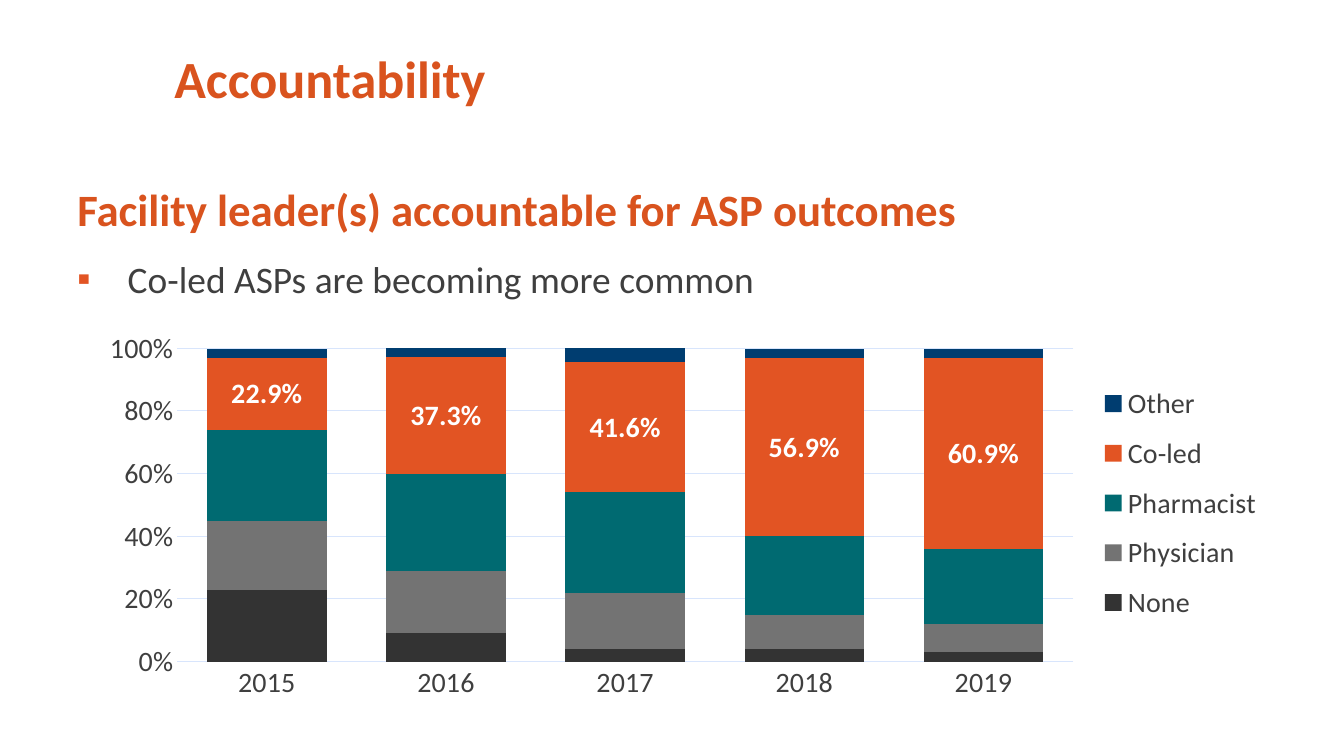
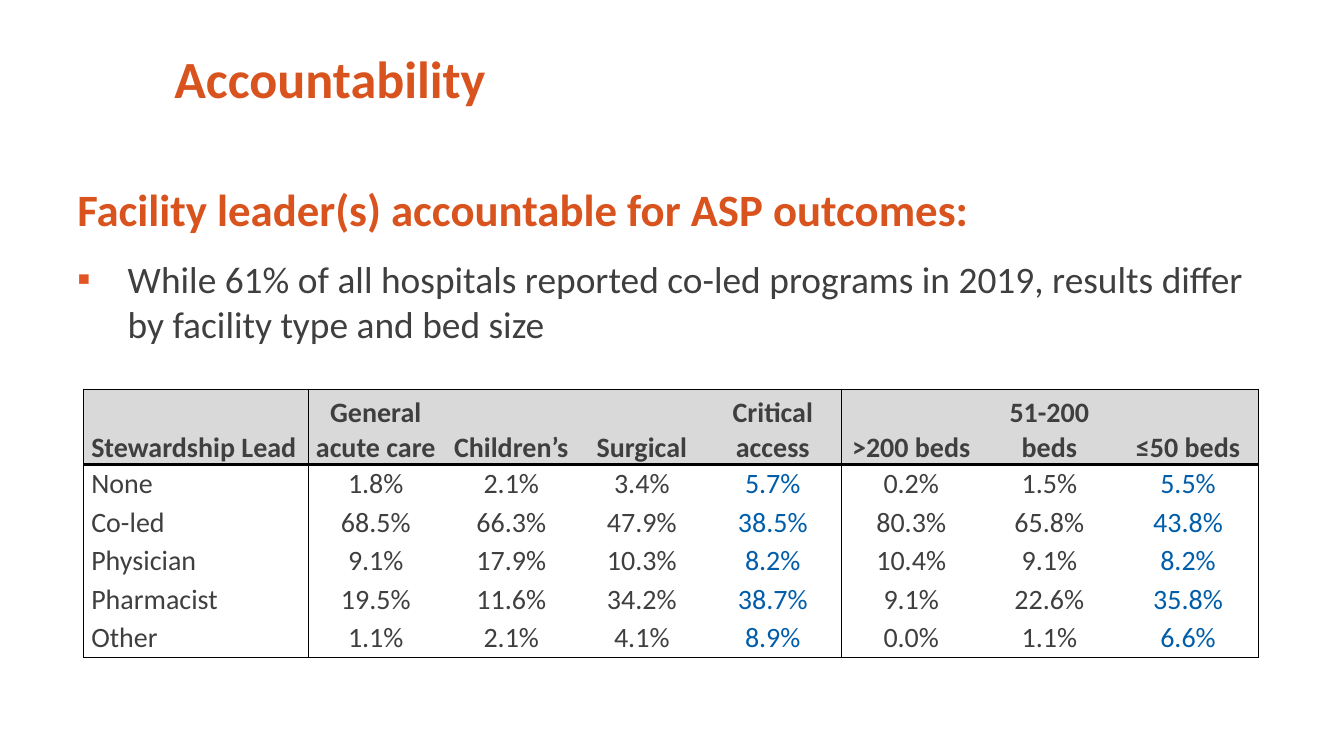
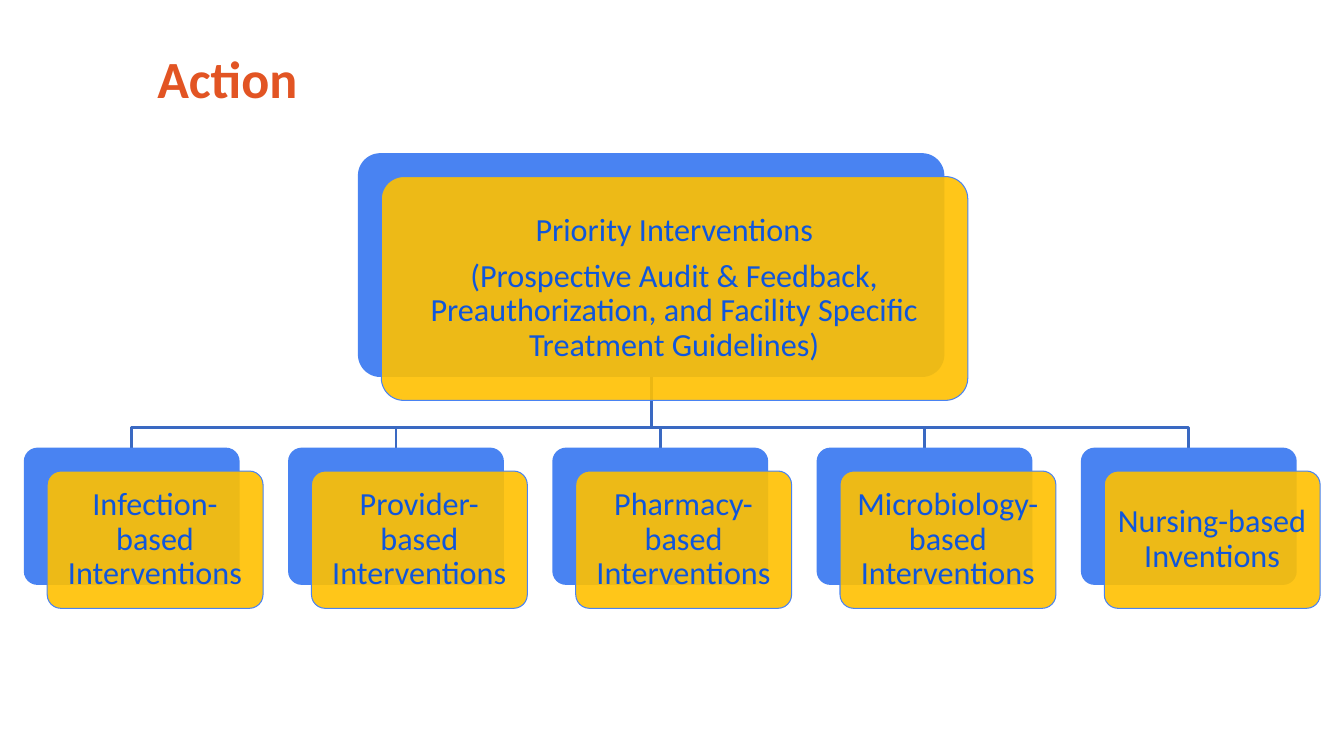
"""Build three slides on accountability and action in stewardship programs."""
from lxml.etree import SubElement
from pptx import Presentation
from pptx.chart.data import CategoryChartData
from pptx.dml.color import RGBColor
from pptx.enum.chart import XL_CHART_TYPE, XL_LEGEND_POSITION, XL_TICK_MARK
from pptx.enum.shapes import MSO_SHAPE
from pptx.enum.text import MSO_ANCHOR, MSO_AUTO_SIZE, PP_ALIGN
from pptx.oxml import parse_xml
from pptx.oxml.ns import nsdecls, qn
from pptx.util import Cm, Pt

FONT = "Calibri"
ORANGE, BRIGHT_ORANGE, GRAY = "D9531E", "E25423", "3F3F3F"
BLUE, PALE_BLUE, TREE_BLUE = "005DAA", "D8E5FC", "4983F2"
TITLE_FONT = {"size": Pt(37.3), "bold": True}
SUBTITLE_FONT = {"size": Pt(32), "bold": True}
HEADING_LINES = {"alignment": PP_ALIGN.LEFT, "line_spacing": Pt(40)}
HEADING_FRAME = {"word_wrap": True, "auto_size": MSO_AUTO_SIZE.NONE, "vertical_anchor": MSO_ANCHOR.BOTTOM}


def color(value):
    return RGBColor.from_string(value)


def write(frame, lines, font_color, font_format, paragraph_format):
    for number, line in enumerate(lines):
        para = frame.add_paragraph() if number else frame.paragraphs[0]
        for name, value in paragraph_format.items():
            setattr(para, name, value)
        span = para.add_run()
        span.text = line
        span.font.name = FONT
        span.font.color.rgb = color(font_color)
        for name, value in font_format.items():
            setattr(span.font, name, value)


deck = Presentation()
deck.slide_width, deck.slide_height = Cm(33.87), Cm(19.05)

pages = []
for title_text, title_left, title_color in [
    ("Accountability", 4.14, ORANGE),
    ("Accountability", 4.14, ORANGE),
    ("Action", 3.71, BRIGHT_ORANGE),
]:
    page = deck.slides.add_slide(deck.slide_layouts[5])
    title = page.shapes.title
    title.left, title.top, title.width, title.height = Cm(title_left), Cm(1.02), Cm(14), Cm(1.85)
    for name, value in HEADING_FRAME.items():
        setattr(title.text_frame, name, value)
    write(title.text_frame, [title_text], title_color, TITLE_FONT, HEADING_LINES)
    pages.append(page)
chart_page, table_page, tree_page = pages

for page, subtitle_text, bullet_text in [
    (chart_page, "Facility leader(s) accountable for ASP outcomes", "Co-led ASPs are becoming more common"),
    (table_page, "Facility leader(s) accountable for ASP outcomes:",
     "While 61% of all hospitals reported co-led programs in 2019, results differ by facility type and bed size"),
]:
    subtitle = page.shapes.add_textbox(Cm(1.7), Cm(3.53), Cm(30.48), Cm(2.54))
    for name, value in HEADING_FRAME.items():
        setattr(subtitle.text_frame, name, value)
    write(subtitle.text_frame, [subtitle_text], ORANGE, SUBTITLE_FONT, HEADING_LINES)

    body = page.shapes.add_textbox(Cm(1.7), Cm(6.33), Cm(30.48), Cm(2.6))
    body.text_frame.word_wrap = True
    properties = body.text_frame.paragraphs[0]._p.get_or_add_pPr()
    properties.set("marL", str(Cm(1.27)))
    properties.set("indent", str(-Cm(1.27)))
    SubElement(SubElement(properties, qn("a:buClr")), qn("a:srgbClr"), val=BRIGHT_ORANGE)
    SubElement(properties, qn("a:buFont"), typeface=FONT)
    SubElement(properties, qn("a:buChar"), char="▪")
    write(body.text_frame, [bullet_text], GRAY, {"size": Pt(26.7)}, {})

leaders = CategoryChartData(number_format="0%")
leaders.categories = ["2015", "2016", "2017", "2018", "2019"]
leader_series = [
    ("None", "333333", (0.23, 0.09, 0.04, 0.04, 0.03)),
    ("Physician", "737373", (0.22, 0.2, 0.18, 0.11, 0.09)),
    ("Pharmacist", "006A71", (0.29, 0.31, 0.32, 0.25, 0.24)),
    ("Co-led", BRIGHT_ORANGE, (0.229, 0.373, 0.416, 0.569, 0.609)),
    ("Other", "003D70", (0.03, 0.03, 0.05, 0.03, 0.03)),
]
for name, fill_color, values in leader_series:
    leaders.add_series(name, values)
chart = chart_page.shapes.add_chart(
    XL_CHART_TYPE.COLUMN_STACKED, Cm(2.06), Cm(8.2), Cm(30.1), Cm(9.63), leaders).chart
chart.has_title = False
chart.font.name, chart.font.size = FONT, Pt(20)
chart.font.color.rgb = color(GRAY)
chart.has_legend = True
chart.legend.position = XL_LEGEND_POSITION.RIGHT
chart.legend.include_in_layout = False

plot = chart.plots[0]
plot.gap_width, plot.overlap, plot.vary_by_categories = 50, 100, False
for series, (name, fill_color, values) in zip(plot.series, leader_series):
    series.format.fill.solid()
    series.format.fill.fore_color.rgb = color(fill_color)
labels = plot.series[3].data_labels
labels.show_value = True
labels.number_format, labels.number_format_is_linked = "0.0%", False
labels.font.name, labels.font.size, labels.font.bold = FONT, Pt(20), True
labels.font.color.rgb = color("FFFFFF")

years, shares = chart.category_axis, chart.value_axis
for axis in (years, shares):
    axis.major_tick_mark = axis.minor_tick_mark = XL_TICK_MARK.NONE
shares.minimum_scale, shares.maximum_scale, shares.major_unit = 0, 1, 0.2
shares.tick_labels.number_format, shares.tick_labels.number_format_is_linked = "0%", False
shares.format.line.fill.background()
for line in (years.format.line, shares.major_gridlines.format.line):
    line.color.rgb = color(PALE_BLUE)
    line.width = Pt(0.75)

plot_area = chart._chartSpace.find(".//" + qn("c:plotArea"))
for parent, position, target, bounds in [
    (plot_area, 0, '<c:layoutTarget val="inner"/>', {"x": 0.08, "y": 0.06, "w": 0.75, "h": 0.82}),
    (chart.legend._element, 1, "", {"x": 0.85, "y": 0.12, "w": 0.14, "h": 0.69}),
]:
    for old_layout in parent.findall(qn("c:layout")):
        parent.remove(old_layout)
    modes = "".join(f'<c:{side}Mode val="edge"/>' for side in "xy")
    sizes = "".join(f'<c:{side} val="{value}"/>' for side, value in bounds.items())
    parent.insert(position, parse_xml(
        f'<c:layout {nsdecls("c")}><c:manualLayout>{target}{modes}{sizes}</c:manualLayout></c:layout>'))

rows = [
    ("Stewardship Lead", "General acute care", "Children’s", "Surgical", "Critical access",
     ">200 beds", "51-200 beds", "≤50 beds"),
    ("None", "1.8%", "2.1%", "3.4%", "5.7%", "0.2%", "1.5%", "5.5%"),
    ("Co-led", "68.5%", "66.3%", "47.9%", "38.5%", "80.3%", "65.8%", "43.8%"),
    ("Physician", "9.1%", "17.9%", "10.3%", "8.2%", "10.4%", "9.1%", "8.2%"),
    ("Pharmacist", "19.5%", "11.6%", "34.2%", "38.7%", "9.1%", "22.6%", "35.8%"),
    ("Other", "1.1%", "2.1%", "4.1%", "8.9%", "0.0%", "1.1%", "6.6%"),
]
column_widths = [5.66, 3.4, 3.43, 3.15, 3.45, 3.53, 3.43, 3.56]
row_heights = [1.91] + [0.97] * 5
table = table_page.shapes.add_table(
    len(rows), len(column_widths), Cm(2.11), Cm(9.8), Cm(sum(column_widths)), Cm(sum(row_heights))).table
for column, width in zip(table.columns, column_widths):
    column.width = Cm(width)
for row, height in zip(table.rows, row_heights):
    row.height = Cm(height)
vertical_rules = {0: 0.5, 1: 0.5, 5: 0.5, 8: 0.5}
horizontal_rules = {0: 0.5, 1: 2, 6: 0.5}
for row_number, texts in enumerate(rows):
    for column_number, text in enumerate(texts):
        cell = table.cell(row_number, column_number)
        is_header, is_label = row_number == 0, column_number == 0
        cell_format = {
            "margin_left": Cm(0.19 if is_label else 0.02), "margin_right": Cm(0.02),
            "margin_top": Cm(0.02), "margin_bottom": 0,
            "vertical_anchor": MSO_ANCHOR.BOTTOM if is_header else MSO_ANCHOR.MIDDLE,
        }
        for name, value in cell_format.items():
            setattr(cell, name, value)
        for side, weight in [
            ("lnL", vertical_rules.get(column_number)),
            ("lnR", vertical_rules.get(column_number + 1)),
            ("lnT", horizontal_rules.get(row_number)),
            ("lnB", horizontal_rules.get(row_number + 1)),
        ]:
            border = SubElement(cell._tc.get_or_add_tcPr(), qn(f"a:{side}"), w=str(Pt(weight or 0)))
            if weight:
                SubElement(SubElement(border, qn("a:solidFill")), qn("a:srgbClr"), val="000000")
            else:
                SubElement(border, qn("a:noFill"))
        cell.fill.solid()
        cell.fill.fore_color.rgb = color("D9D9D9" if is_header else "FFFFFF")
        text_color = BLUE if column_number in (4, 7) and not is_header else GRAY
        write(cell.text_frame, [text], text_color, {"size": Pt(20), "bold": is_header},
              {"alignment": PP_ALIGN.LEFT if is_label else PP_ALIGN.CENTER})

leaf_left, leaf_top, leaf_width, leaf_height, leaf_pitch = 0.6, 11.28, 5.44, 3.46, 6.66
root_left, root_top, root_width, root_height = 9.02, 3.86, 14.78, 5.64
card_offset = 0.59
trunk_x, trunk_top, branch_y = root_left + root_width / 2, root_top + root_height, 10.77
cards = [(root_left, root_top, root_width, root_height, [
    "Priority Interventions",
    "(Prospective Audit & Feedback, Preauthorization, and Facility Specific Treatment Guidelines)"])]
for number, text in enumerate([
    "Infection-based Interventions", "Provider-based Interventions", "Pharmacy-based Interventions",
    "Microbiology-based Interventions", "Nursing-based Inventions",
]):
    left = leaf_left + number * leaf_pitch
    cards.append((left, leaf_top, leaf_width, leaf_height, [text]))
    leaf_x = left + leaf_width / 2
    builder = tree_page.shapes.build_freeform(Cm(trunk_x), Cm(trunk_top))
    builder.add_line_segments(
        [(Cm(x), Cm(y)) for x, y in [(trunk_x, branch_y), (leaf_x, branch_y), (leaf_x, leaf_top)]], close=False)
    branch = builder.convert_to_shape()
    branch.shadow.inherit = False
    branch.fill.background()
    branch.line.color.rgb = color("3A69C2")
    branch.line.width = Pt(2)

for left, top, width, height, lines in cards:
    for offset, fill_color in [(0, TREE_BLUE), (card_offset, "FFC000")]:
        box = tree_page.shapes.add_shape(
            MSO_SHAPE.ROUNDED_RECTANGLE, Cm(left + offset), Cm(top + offset), Cm(width), Cm(height))
        box.adjustments[0] = 0.1
        box.shadow.inherit = False
        box.fill.solid()
        box.fill.fore_color.rgb = color(fill_color)
        box.line.fill.background()
    box.line.color.rgb = color(TREE_BLUE)
    box.line.width = Pt(0.75)
    fill_element = box._element.spPr.find(qn("a:solidFill")).find(qn("a:srgbClr"))
    SubElement(fill_element, qn("a:alpha"), val="90000")
    frame_format = {"word_wrap": True, "vertical_anchor": MSO_ANCHOR.MIDDLE}
    frame_format.update({f"margin_{side}": Cm(0.24) for side in ("left", "top", "right", "bottom")})
    for name, value in frame_format.items():
        setattr(box.text_frame, name, value)
    write(box.text_frame, lines, "0F56DC", {"size": Pt(23)},
          {"alignment": PP_ALIGN.CENTER, "line_spacing": 0.9, "space_after": Pt(8)})

deck.save("out.pptx")
